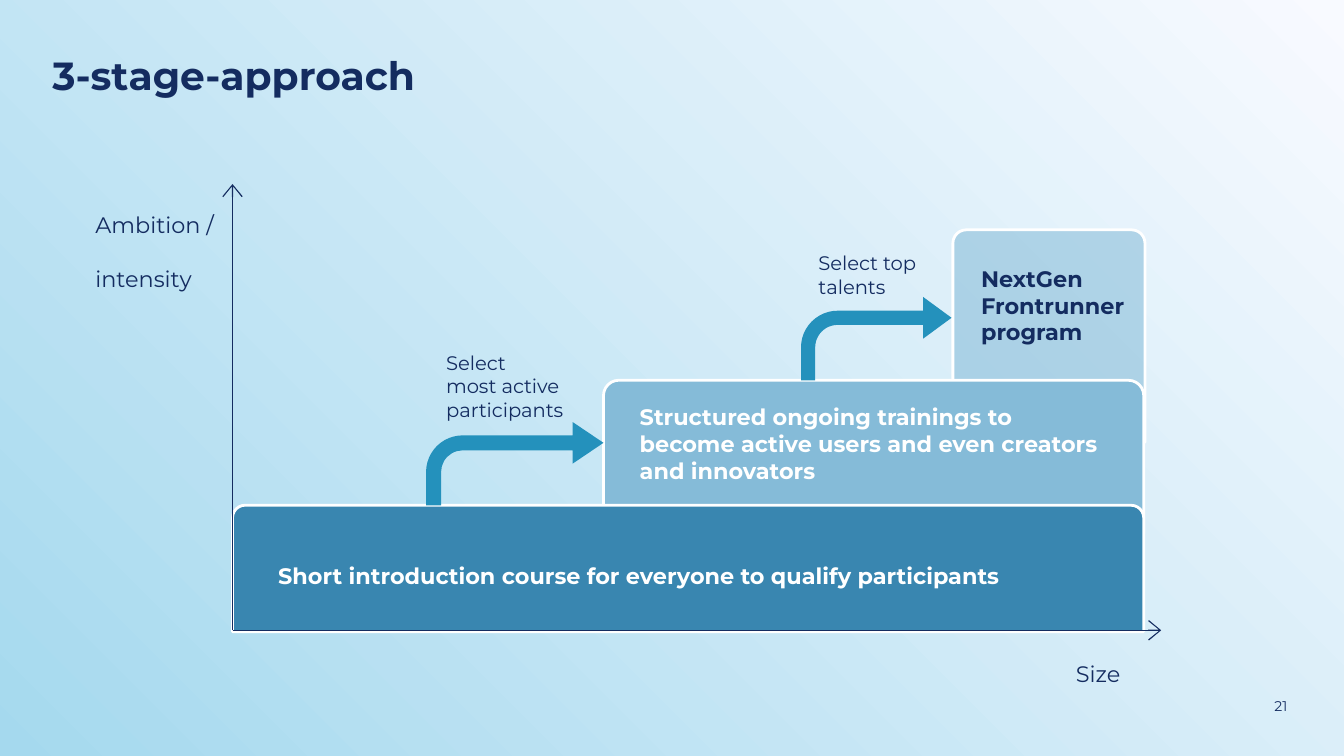
import pptx
import pptx.util
import pptx.dml.color
import pptx.enum.shapes
import pptx.enum.text
import pptx.oxml.ns
import lxml.etree

Inches = pptx.util.Inches
SHAPES = pptx.enum.shapes.MSO_SHAPE
ALIGN = pptx.enum.text.PP_ALIGN
NAVY, WHITE, SKY, OCEAN, TEAL = "142C60", "FFFFFF", "85BBD8", "3986B0", "2491BC"


def colour(code):
    return pptx.dml.color.RGBColor.from_string(code)


def add_element(parent, tag, **attributes):
    return lxml.etree.SubElement(parent, pptx.oxml.ns.qn(tag), attributes)


def inside(box, left, top, width, height):
    return box[0] + left, box[1] + top, width, height


def add_text(page, box, text, size=12, code=NAVY, bold=False, align=ALIGN.LEFT, gap=0):
    frame = page.shapes.add_textbox(*map(Inches, box)).text_frame
    settings = {"word_wrap": True, "margin_left": 0, "margin_right": 0,
                "margin_top": 0, "margin_bottom": 0}
    for name, value in settings.items():
        setattr(frame, name, value)
    frame.text = text
    font_format = {"name": "Montserrat", "size": pptx.util.Pt(size), "bold": bold}
    for index, para in enumerate(frame.paragraphs):
        para.alignment = align
        para.space_before = pptx.util.Pt(gap if index else 0)
        for span in para.runs:
            for name, value in font_format.items():
                setattr(span.font, name, value)
            span.font.color.rgb = colour(code)


def add_filled(page, kind, box, adjustments, code):
    shape = page.shapes.add_shape(kind, *map(Inches, box))
    shape.shadow.inherit = False
    for index, value in enumerate(adjustments):
        shape.adjustments[index] = value
    shape.fill.solid()
    shape.fill.fore_color.rgb = colour(code)
    shape.line.fill.background()
    return shape


def add_stage(page, box, corner, code, text, text_box, text_code=WHITE, opacity=None):
    block = add_filled(page, SHAPES.ROUND_2_SAME_RECTANGLE, box, (corner, 0), code)
    block.line.color.rgb = colour(WHITE)
    block.line.width = pptx.util.Pt(1.5)
    if opacity:
        fill_colour = block._element.spPr.find(".//" + pptx.oxml.ns.qn("a:srgbClr"))
        add_element(fill_colour, "a:alpha", val=str(opacity * 1000))
    add_text(page, inside(box, *text_box), text, code=text_code, bold=True)


def add_selection(page, box, adjustments, text, text_box):
    add_filled(page, SHAPES.BENT_ARROW, box, adjustments, TEAL)
    add_text(page, inside(box, *text_box), text, size=10.5)


def add_axes(page, box):
    left, top, width, height = box
    bottom = top + height
    for end in ((left + width, bottom), (left, top)):
        axis = page.shapes.add_connector(
            pptx.enum.shapes.MSO_CONNECTOR.STRAIGHT, *map(Inches, (left, bottom, *end)))
        axis.line.color.rgb = colour(NAVY)
        axis.line.width = pptx.util.Pt(0.75)
        add_element(axis.line._get_or_add_ln(), "a:tailEnd", type="arrow", w="lg", len="med")
        add_element(axis._element.spPr, "a:effectLst")
    add_text(page, inside(box, -1.02, 0.2, 0.94, 0.4), "Ambition /\nintensity", gap=14.4)
    add_text(page, inside(box, 5.43, height + 0.22, 2.02, 0.2), "Size", align=ALIGN.CENTER)


def add_background(page):
    fill = page.background.fill
    fill.gradient()
    fill.gradient_angle = 45
    for stop, code in zip(fill.gradient_stops, ("A5D9EE", "F8FAFF")):
        stop.color.rgb = colour(code)


def build_slide(page):
    add_background(page)
    add_text(page, (0.39, 0.38, 7.83, 0.35), "3-stage-approach", size=21, bold=True)
    add_stage(page, (7.09, 1.71, 1.43, 1.58), 0.07, SKY,
              "NextGen Frontrunner program", (0.21, 0.26, 1.3, 0.61), NAVY, 56)
    add_stage(page, (4.49, 2.83, 4.02, 1.14), 0.1, SKY,
              "Structured ongoing trainings to become active users and even creators and innovators",
              (0.27, 0.17, 3.49, 0.61))
    add_stage(page, (1.73, 3.76, 6.78, 0.94), 0.1, OCEAN,
              "Short introduction course for everyone to qualify participants",
              (0.34, 0.42, 6.1, 0.2))
    add_selection(page, (3.17, 3.14, 1.32, 0.62), (0.18, 0.25, 0.37, 0.44),
                  "Select\vmost active participants", (0.15, -0.53, 1.2, 0.53))
    add_selection(page, (5.96, 2.21, 1.12, 0.62), (0.17, 0.25, 0.34, 0.44),
                  "Select top talents", (0.13, -0.34, 1.2, 0.35))
    add_axes(page, (1.73, 1.37, 6.91, 3.32))
    add_text(page, (8.93, 5.19, 0.65, 0.13), "21", size=7.5, align=ALIGN.RIGHT)


def main():
    deck = pptx.Presentation()
    deck.slide_width = Inches(10)
    deck.slide_height = deck.slide_width * 9 // 16
    build_slide(deck.slides.add_slide(deck.slide_layouts[6]))
    deck.save("out.pptx")


if __name__ == "__main__":
    main()
